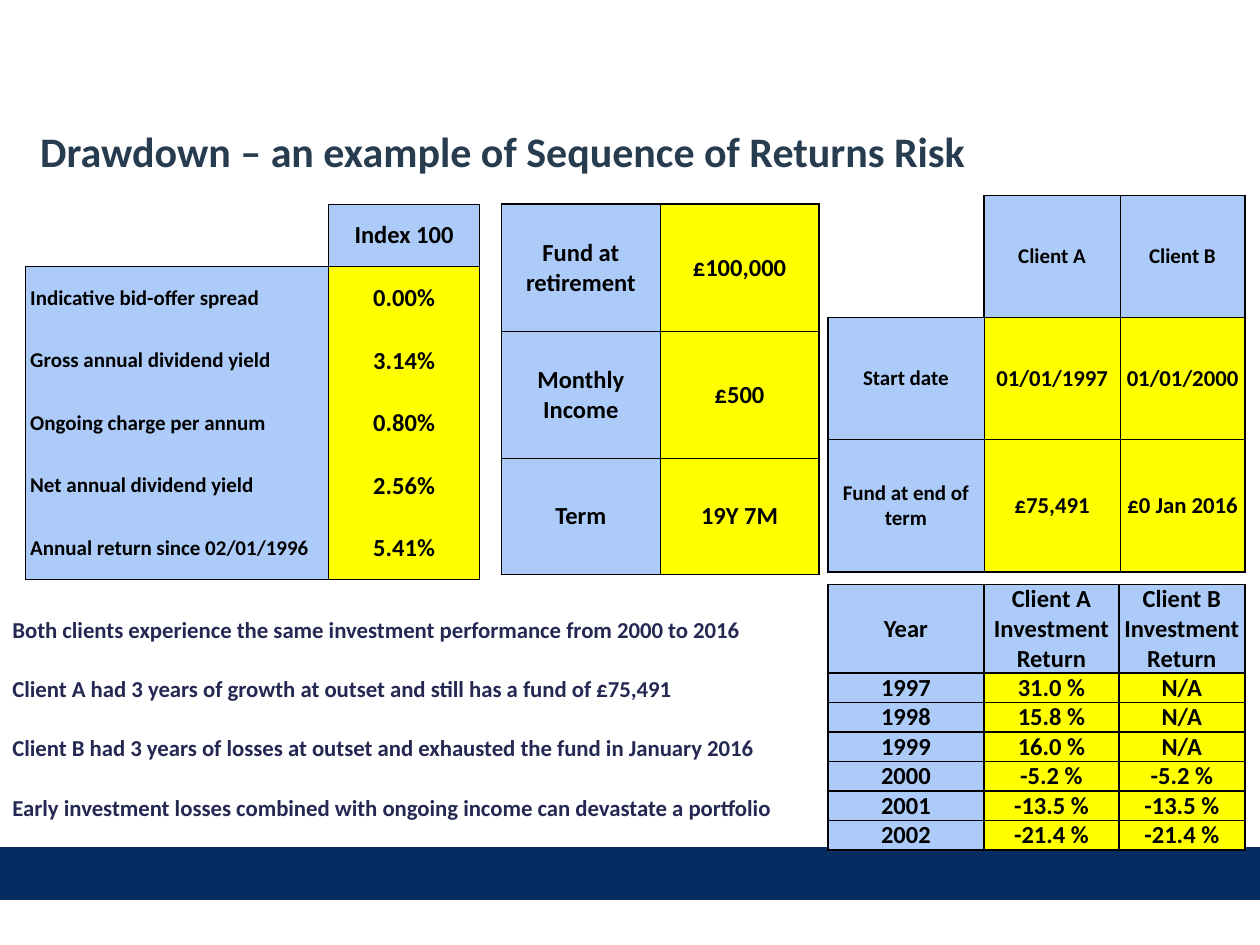
import pptx
import pptx.util
import pptx.dml.color
import pptx.enum.shapes
import pptx.enum.text
import pptx.oxml
import pptx.oxml.ns

COLUMNS, ROWS = 100, 75
BLUE, YELLOW, BLACK = "ACCBF9", "FFFF00", "000000"
NAVY, SLATE, INDIGO = "072C62", "283C50", "242852"
CENTER = pptx.enum.text.PP_ALIGN.CENTER
LEFT = pptx.enum.text.PP_ALIGN.LEFT
MIDDLE = pptx.enum.text.MSO_ANCHOR.MIDDLE
EDGES = {"lnL": (0, -1), "lnR": (0, 1), "lnT": (-1, 0), "lnB": (1, 0)}


def color(code):
    return pptx.dml.color.RGBColor.from_string(code)


def write(frame, text, size, ink=BLACK, align=LEFT, spacing=1.0, gap=0):
    for index, line in enumerate(text.split("\n")):
        para = frame.paragraphs[0] if index == 0 else frame.add_paragraph()
        para.alignment = align
        para.line_spacing = spacing
        para.space_before = pptx.util.Pt(gap if index else 0)
        span = para.add_run()
        span.text = line
        span.font.name = "Calibri"
        span.font.size = pptx.util.Pt(size)
        span.font.bold = True
        span.font.color.rgb = color(ink)


def add_border(cell, edge, width):
    namespace = pptx.oxml.ns.nsdecls("a")
    if width:
        paint = f'<a:solidFill><a:srgbClr val="{BLACK}"/></a:solidFill>'
    else:
        paint = "<a:noFill/>"
    line = f'<a:{edge} {namespace} w="{int(width * 12700)}">{paint}</a:{edge}>'
    cell._tc.get_or_add_tcPr().append(pptx.oxml.parse_xml(line))


class SlideBuilder:
    def __init__(self, deck):
        self.deck = deck
        self.page = deck.slides.add_slide(deck.slide_layouts[6])

    def across(self, columns):
        return int(self.deck.slide_width * columns / COLUMNS)

    def down(self, rows):
        return int(self.deck.slide_height * rows / ROWS)

    def place(self, left, top, width, height):
        return self.across(left), self.down(top), self.across(width), self.down(height)

    def bar(self, *area):
        kind = pptx.enum.shapes.MSO_SHAPE.RECTANGLE
        shape = self.page.shapes.add_shape(kind, *self.place(*area))
        shape.shadow.inherit = False
        shape.fill.solid()
        shape.fill.fore_color.rgb = color(NAVY)
        shape.line.color.rgb = color(NAVY)
        shape.line.width = pptx.util.Pt(2)

    def text(self, area, text, anchor=pptx.enum.text.MSO_ANCHOR.TOP, **style):
        box = self.page.shapes.add_textbox(*self.place(*area))
        box.text_frame.word_wrap = True
        box.text_frame.vertical_anchor = anchor
        write(box.text_frame, text, **style)

    def table(self, left, top, widths, heights, grid, headers=0, labels=1,
              label_size=14, value_size=14, header_size=14, label_align=CENTER,
              indent=0, outer=1, inner=0.5, divided=True):
        area = self.place(left, top, sum(widths), sum(heights))
        table = self.page.shapes.add_table(len(heights), len(widths), *area).table
        table.first_row = table.horz_banding = False
        for column, width in zip(table.columns, widths):
            column.width = self.across(width)
        for row, height in zip(table.rows, heights):
            row.height = self.down(height)

        def filled(row, column):
            inside = 0 <= row < len(heights) and 0 <= column < len(widths)
            return inside and grid[row][column] is not None

        def edge_width(row, column, step_down, step_across):
            beside = row + step_down, column + step_across
            here, there = filled(row, column), filled(*beside)
            if here and there:
                joined = step_down and min(row, beside[0]) >= headers
                return 0 if joined and not divided else inner
            return outer if here or there else 0

        for row, entries in enumerate(grid):
            for column, entry in enumerate(entries):
                cell = table.cell(row, column)
                cell.margin_left = cell.margin_right = 0
                cell.margin_top = cell.margin_bottom = 0
                cell.vertical_anchor = MIDDLE
                for edge, step in EDGES.items():
                    add_border(cell, edge, edge_width(row, column, *step))
                if entry is None:
                    cell.fill.background()
                    continue
                is_label = row >= headers and column < labels
                cell.fill.solid()
                cell.fill.fore_color.rgb = color(BLUE if is_label or row < headers else YELLOW)
                if not entry:
                    continue
                if is_label:
                    cell.margin_left = self.across(indent)
                    write(cell.text_frame, entry, label_size, align=label_align)
                else:
                    size = header_size if row < headers else value_size
                    write(cell.text_frame, entry, size, align=CENTER)
            if labels > 1 and row >= headers:
                table.cell(row, 0).merge(table.cell(row, labels - 1))


def main():
    deck = pptx.Presentation()
    deck.slide_width = pptx.util.Inches(10)
    deck.slide_height = pptx.util.Inches(7.5)
    slide = SlideBuilder(deck)

    slide.bar(0, 67.4, 100, 3.9)
    slide.text((2.2, 9.2, 96.9, 5.5), "Drawdown – an example of Sequence of Returns Risk",
               anchor=MIDDLE, size=24, ink=SLATE)
    findings = [
        "Both clients experience the same investment performance from 2000 to 2016",
        "Client A had 3 years of growth at outset and still has a fund of £75,491",
        "Client B had 3 years of losses at outset and exhausted the fund in January 2016",
        "Early investment losses combined with ongoing income can devastate a portfolio",
    ]
    slide.text((0, 46.2, 65.7, 21.3), "\n".join(findings),
               size=13, ink=INDIGO, spacing=2.0, gap=2.6)

    index_figures = [
        ("Indicative bid-offer spread", "0.00%"),
        ("Gross annual dividend yield", "3.14%"),
        ("Ongoing charge per annum", "0.80%"),
        ("Net annual dividend yield", "2.56%"),
        ("Annual return since 02/01/1996", "5.41%"),
    ]
    slide.table(2, 16.2, [12.03] * 3, [4.97] * 6,
                [(None, None, "Index 100")] + [(name, "", value) for name, value in index_figures],
                headers=1, labels=2, label_size=12, label_align=LEFT, indent=0.4,
                outer=0.5, divided=False)

    slide.table(39.8, 16.2, [12.6] * 2, [10.1, 10.1, 9.2], [
        ("Fund at retirement", "£100,000"),
        ("Monthly Income", "£500"),
        ("Term", "19Y 7M"),
    ])

    slide.table(65.7, 15.5, [12.4, 10.8, 9.9], [9.7, 9.7, 10.5], [
        (None, "Client A", "Client B"),
        ("Start date", "01/01/1997", "01/01/2000"),
        ("Fund at end of term", "£75,491", "£0 Jan 2016"),
    ], headers=1, label_size=12, header_size=12, value_size=13)

    yearly_returns = [
        ("1997", "31.0 %", "N/A"),
        ("1998", "15.8 %", "N/A"),
        ("1999", "16.0 %", "N/A"),
        ("2000", "-5.2 %", "-5.2 %"),
        ("2001", "-13.5 %", "-13.5 %"),
        ("2002", "-21.4 %", "-21.4 %"),
    ]
    heading = ("Year", "Client A\nInvestment Return", "Client B\nInvestment Return")
    slide.table(65.7, 46.4, [12.4, 10.7, 10], [6.7] + [2.15] * 6,
                [heading] + yearly_returns, headers=1, inner=1)

    deck.save("out.pptx")


if __name__ == "__main__":
    main()
